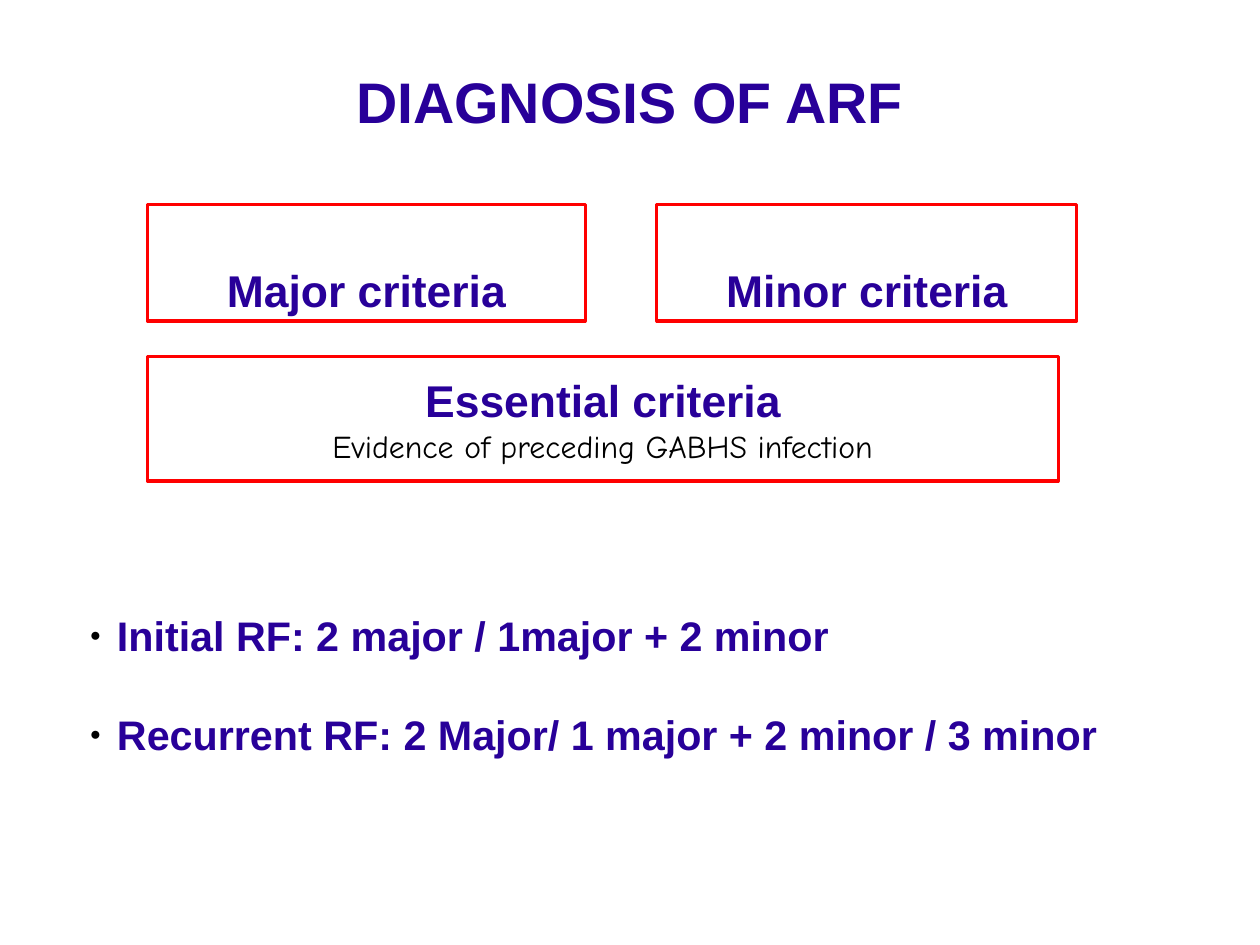
"""Build the slide on the diagnosis of ARF."""
from dataclasses import dataclass
from lxml.etree import SubElement
from pptx import Presentation
from pptx.dml.color import RGBColor as Rgb
from pptx.enum.shapes import MSO_SHAPE as Shape
from pptx.enum.text import MSO_ANCHOR as Anchor, MSO_AUTO_SIZE as Fit, PP_ALIGN as Align
from pptx.oxml.ns import qn
from pptx.util import Pt

SIZE = (793.75, 595.25)
TITLE = "DIAGNOSIS OF ARF"
RULES = [
    "Initial RF: 2 major / 1major + 2 minor",
    "Recurrent RF: 2 Major/ 1 major + 2 minor / 3 minor",
]
BOXES = [
    (["Major criteria"], (92.9, 128.8, 275.8, 73.4), 2),
    (["Minor criteria"], (413.8, 128.8, 264.4, 73.4), 2),
    (["Essential criteria", "Evidence of preceding GABHS infection"],
     (92.9, 224.5, 573.8, 78.5), 1),
]


@dataclass(frozen=True)
class Theme:
    """Hold the colours, fonts and type sizes."""
    ink: str = "280099"
    dark: str = "000000"
    edge: str = "FF0000"
    main: str = "Arial"
    note: str = "Comic Neue"
    title: int = 36
    head: int = 28
    rule: int = 26
    small: int = 20


LOOK = Theme()


def style(para, size, align, gap=1, face=LOOK.main, color=LOOK.ink, bold=True):
    """Format one paragraph and its runs."""
    para.alignment = align
    para.line_spacing = gap
    para.space_before = para.space_after = Pt(0)
    for run in para.runs:
        font = run.font
        font.name, font.size, font.bold = face, Pt(size), bold
        font.color.rgb = Rgb.from_string(color)


def bullet(para):
    """Give a paragraph a small round bullet."""
    props = para._p.get_or_add_pPr()
    props.set("marL", str(Pt(17)))
    props.set("indent", str(Pt(-17)))
    tint = SubElement(props, qn("a:buClr"))
    SubElement(tint, qn("a:srgbClr"), val=LOOK.dark)
    SubElement(props, qn("a:buSzPct"), val="45000")
    SubElement(props, qn("a:buChar"), char="●")


def place(holder, area, text, anchor):
    """Move a placeholder and fill it with text."""
    holder.left, holder.top, holder.width, holder.height = map(Pt, area)
    frame = holder.text_frame
    frame.text = text
    frame.word_wrap, frame.auto_size = True, Fit.NONE
    frame.vertical_anchor = anchor
    frame.margin_left = frame.margin_right = frame.margin_bottom = Pt(0)
    frame.margin_top = Pt(2)
    return frame.paragraphs


def panel(slide, lines, area, gap):
    """Draw one outlined box of criteria."""
    box = slide.shapes.add_shape(Shape.RECTANGLE, *map(Pt, area))
    box.shadow.inherit = False
    box.fill.background()
    box.line.color.rgb = Rgb.from_string(LOOK.edge)
    box.line.width = Pt(2)
    frame = box.text_frame
    frame.text = "\n".join(lines)
    frame.word_wrap, frame.vertical_anchor = True, Anchor.MIDDLE
    head, *notes = frame.paragraphs
    style(head, LOOK.head, Align.CENTER, gap)
    for note in notes:
        style(note, LOOK.small, Align.CENTER, gap, LOOK.note, LOOK.dark, False)


def main():
    """Put the slide together and save it."""
    deck = Presentation()
    deck.slide_width, deck.slide_height = map(Pt, SIZE)
    slide = deck.slides.add_slide(deck.slide_layouts[1])
    title, body = slide.placeholders
    for para in place(title, (39.6, 12.4, 714.2, 99.4), TITLE, Anchor.MIDDLE):
        style(para, LOOK.title, Align.CENTER)
    area = (56.7, 331.2, 697, 147)
    for para in place(body, area, "\n".join(RULES), Anchor.BOTTOM):
        bullet(para)
        style(para, LOOK.rule, Align.LEFT, 2)
    for lines, area, gap in BOXES:
        panel(slide, lines, area, gap)
    deck.save("out.pptx")


if __name__ == "__main__":
    main()
